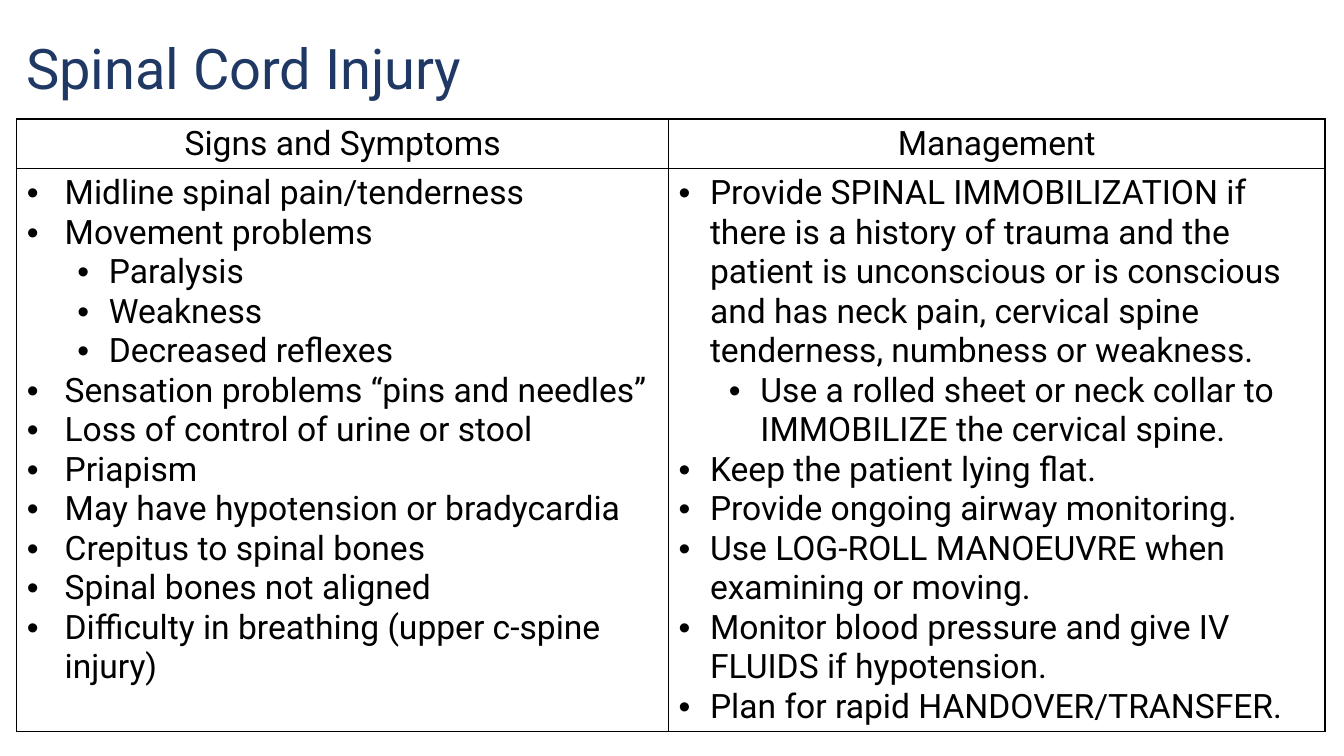
from dataclasses import dataclass

from lxml import etree
from pptx import Presentation
from pptx.enum import text
from pptx.dml.color import RGBColor
from pptx.oxml import ns
from pptx.util import Pt

COLORS = {"title": "203864", "body": "000000", "border": "000000"}
FONT = "Roboto"
BODY_SIZE = 24
TABLE_LEFT, TABLE_TOP = 12, 85
COLUMN_WIDTHS = (465.5, 469)
ROW_HEIGHTS = (35, 402)


@dataclass
class Item:
    words: str
    level: int = 0


@dataclass
class Column:
    heading: str
    indent: float
    items: list[Item]


SUB_LEFT, SUB_INDENT = 58.5, 22.5
COLUMNS = [
    Column("Signs and Symptoms", 27, [
        Item("Midline spinal pain/tenderness"),
        Item("Movement problems"),
        Item("Paralysis", 1),
        Item("Weakness", 1),
        Item("Decreased reflexes", 1),
        Item("Sensation problems “pins and needles”"),
        Item("Loss of control of urine or stool"),
        Item("Priapism"),
        Item("May have hypotension or bradycardia"),
        Item("Crepitus to spinal bones"),
        Item("Spinal bones not aligned"),
        Item("Difficulty in breathing (upper c-spine injury)"),
    ]),
    Column("Management", 22.5, [
        Item("Provide SPINAL IMMOBILIZATION if there is a history of trauma and "
             "the patient is unconscious or is conscious and has neck pain, "
             "cervical spine tenderness, numbness or weakness."),
        Item("Use a rolled sheet or neck collar to IMMOBILIZE the cervical spine.", 1),
        Item("Keep the patient lying flat."),
        Item("Provide ongoing airway monitoring."),
        Item("Use LOG-ROLL MANOEUVRE when examining or moving."),
        Item("Monitor blood pressure and give IV FLUIDS if hypotension."),
        Item("Plan for rapid HANDOVER/TRANSFER."),
    ]),
]


def set_all(target, values: dict) -> None:
    for name, value in values.items():
        setattr(target, name, value)


def add_span(para, words: str, size: float, color: str) -> None:
    span = para.add_run()
    span.text = words
    set_all(span.font, {"name": FONT, "size": Pt(size), "bold": False})
    span.font.color.rgb = RGBColor.from_string(COLORS[color])


def add_bullet(para, left: float, hanging: float) -> None:
    props = para._p.get_or_add_pPr()
    props.set("marL", str(Pt(left)))
    props.set("indent", str(-Pt(hanging)))
    etree.SubElement(props, ns.qn("a:buFont"), typeface="Arial")
    etree.SubElement(props, ns.qn("a:buChar"), char="•")


def format_cell(cell) -> None:
    """Give the cell thin borders on every side and no fill."""
    props = cell._tc.get_or_add_tcPr()
    for side in ("lnL", "lnR", "lnT", "lnB"):
        line = etree.SubElement(props, ns.qn(f"a:{side}"), w=str(Pt(1)))
        fill = etree.SubElement(line, ns.qn("a:solidFill"))
        etree.SubElement(fill, ns.qn("a:srgbClr"), val=COLORS["border"])
    cell.fill.background()


def add_title(page, words: str) -> None:
    title = page.shapes.title
    set_all(title, {"left": Pt(11.5), "top": Pt(-1.5),
                    "width": Pt(893), "height": Pt(104.5)})
    set_all(title.text_frame, {"vertical_anchor": text.MSO_ANCHOR.MIDDLE,
                               "word_wrap": True})
    para = title.text_frame.paragraphs[0]
    set_all(para, {"alignment": text.PP_ALIGN.LEFT, "line_spacing": 0.9})
    add_span(para, words, 40, "title")


def fill_list(cell, column: Column) -> None:
    frame = cell.text_frame
    for index, item in enumerate(column.items):
        para = frame.add_paragraph() if index else frame.paragraphs[0]
        para.level = item.level
        if item.level:
            add_bullet(para, SUB_LEFT, SUB_INDENT)
        else:
            add_bullet(para, column.indent, column.indent)
        add_span(para, item.words, BODY_SIZE, "body")


def add_care_table(page) -> None:
    frame = page.shapes.add_table(
        len(ROW_HEIGHTS), len(COLUMNS), Pt(TABLE_LEFT), Pt(TABLE_TOP),
        Pt(sum(COLUMN_WIDTHS)), Pt(sum(ROW_HEIGHTS)))
    table = frame.table
    set_all(table, {"first_row": False, "horz_banding": False})
    for row, height in zip(table.rows, ROW_HEIGHTS):
        row.height = Pt(height)
    for index, column in enumerate(COLUMNS):
        table.columns[index].width = Pt(COLUMN_WIDTHS[index])
        heading, body = table.cell(0, index), table.cell(1, index)
        for cell in (heading, body):
            format_cell(cell)
        para = heading.text_frame.paragraphs[0]
        para.alignment = text.PP_ALIGN.CENTER
        add_span(para, column.heading, BODY_SIZE, "body")
        fill_list(body, column)


def main() -> None:
    deck = Presentation()
    set_all(deck, {"slide_width": Pt(960), "slide_height": Pt(540)})
    page = deck.slides.add_slide(deck.slide_layouts.get_by_name("Title Only"))
    add_title(page, "Spinal Cord Injury")
    add_care_table(page)
    deck.save("out.pptx")


if __name__ == "__main__":
    main()
